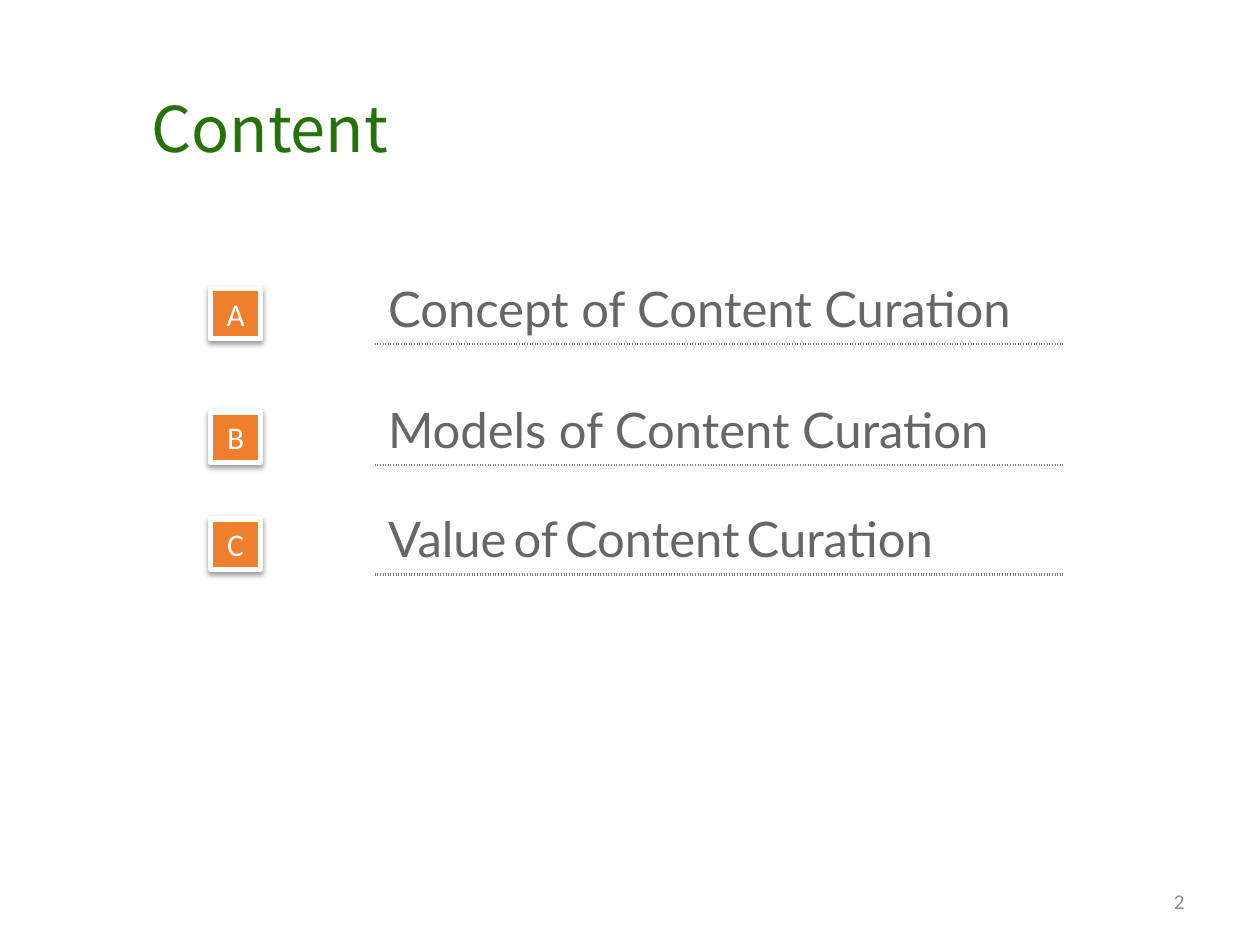
from dataclasses import dataclass
from itertools import accumulate

from lxml.etree import SubElement
from pptx import Presentation
from pptx.dml.color import RGBColor
from pptx.enum.shapes import MSO_SHAPE as Shape
from pptx.enum.text import MSO_ANCHOR as Anchor, MSO_AUTO_SIZE as AutoSize, PP_ALIGN as Align
from pptx.oxml.ns import qn
from pptx.util import Inches, Pt

GREEN = RGBColor(0x26, 0x72, 0x09)
ORANGE = RGBColor(0xEF, 0x7F, 0x2C)
TOPIC_GRAY = RGBColor(0x66, 0x66, 0x66)
RULE_GRAY = RGBColor(0x80, 0x80, 0x80)
NUMBER_GRAY = RGBColor(0x8C, 0x8C, 0x8C)
WHITE = RGBColor(0xFF, 0xFF, 0xFF)
BLACK = RGBColor(0, 0, 0)

LEFT, TOP = 1.67, 1.79
COLUMNS = (0.91, 0.4, 5.45)
ROWS = (0.94, 0.96, 0.87, 0.41)
ROW_ENDS = [TOP + end for end in accumulate(ROWS)]
BADGE = 0.4
TOPIC_COLUMN = len(COLUMNS) - 1


@dataclass(frozen=True)
class Style:
    font: str
    size: float
    color: RGBColor


@dataclass(frozen=True)
class Topic:
    letter: str
    words: tuple[str, ...]
    badge_lift: float = 0.44


TITLE = Style("Noto Sans CJK JP", 36, GREEN)
TOPIC = Style("Lato", 28, TOPIC_GRAY)
GAP = Style("Noto Sans CJK JP", 18, BLACK)
LETTER = Style("Calibri", 18, WHITE)
NUMBER = Style("Calibri", 12, NUMBER_GRAY)

TOPICS = (
    Topic("A", ("Concept of Content Curation",)),
    Topic("B", ("Models of Content Curation",), 0.42),
    Topic("C", ("Value", "of", "Content", "Curation")),
)


def add_run(paragraph, text: str, style: Style) -> None:
    run = paragraph.add_run()
    run.text = text
    run.font.name = style.font
    run.font.size = Pt(style.size)
    run.font.color.rgb = style.color
    if style.font == TITLE.font:
        SubElement(run.font._element, qn("a:ea"), typeface=style.font)


def add_rule(cell, side: str) -> None:
    line = SubElement(cell._tc.get_or_add_tcPr(), qn(f"a:{side}"), w=str(Pt(1.5)))
    fill = SubElement(line, qn("a:solidFill"))
    SubElement(fill, qn("a:srgbClr"), val=str(RULE_GRAY))
    SubElement(line, qn("a:prstDash"), val="sysDot")


def add_soft_shadow(shape) -> None:
    shape.shadow.inherit = False
    effects = shape._element.spPr.find(qn("a:effectLst"))
    shadow = SubElement(effects, qn("a:outerShdw"), blurRad=str(Pt(3.1)),
                        dist=str(Pt(1.6)), dir="5400000", rotWithShape="0")
    color = SubElement(shadow, qn("a:srgbClr"), val=str(BLACK))
    SubElement(color, qn("a:alpha"), val="38000")


def add_title(slide) -> None:
    title = slide.shapes.title
    title.left, title.top, title.width, title.height = map(Inches, (1.1, 0.66, 2.39, 0.71))
    frame = title.text_frame
    frame.word_wrap = False
    frame.auto_size = AutoSize.SHAPE_TO_FIT_TEXT
    frame.vertical_anchor = Anchor.TOP
    frame.paragraphs[0].alignment = Align.LEFT
    add_run(frame.paragraphs[0], "Content", TITLE)


def add_topic_table(slide) -> None:
    table = slide.shapes.add_table(
        len(ROWS), len(COLUMNS), Inches(LEFT), Inches(TOP),
        Inches(sum(COLUMNS)), Inches(sum(ROWS))).table
    table.first_row = table.horz_banding = False
    for column, width in zip(table.columns, COLUMNS):
        column.width = Inches(width)
    for row, height in zip(table.rows, ROWS):
        row.height = Inches(height)
    for index in range(len(ROWS)):
        cell = table.cell(index, TOPIC_COLUMN)
        if index > 0:
            add_rule(cell, "lnT")
        if index < len(TOPICS):
            add_rule(cell, "lnB")
            cell.vertical_anchor = Anchor.BOTTOM
            paragraph = cell.text_frame.paragraphs[0]
            paragraph.alignment = Align.JUSTIFY
            for position, word in enumerate(TOPICS[index].words):
                if position:
                    add_run(paragraph, " ", GAP)
                add_run(paragraph, word, TOPIC)
    for cell in table.iter_cells():
        cell.fill.background()


def add_badge(slide, topic: Topic, row_end: float) -> None:
    badge = slide.shapes.add_shape(
        Shape.RECTANGLE, Inches(LEFT), Inches(row_end - topic.badge_lift),
        Inches(BADGE), Inches(BADGE))
    badge.fill.solid()
    badge.fill.fore_color.rgb = ORANGE
    badge.line.color.rgb = WHITE
    badge.line.width = Pt(3)
    add_soft_shadow(badge)
    frame = badge.text_frame
    frame.vertical_anchor = Anchor.TOP
    frame.auto_size = AutoSize.SHAPE_TO_FIT_TEXT
    frame.paragraphs[0].alignment = Align.CENTER
    add_run(frame.paragraphs[0], topic.letter, LETTER)


def add_page_number(slide) -> None:
    frame = slide.shapes.add_textbox(*map(Inches, (7.17, 6.95, 2.33, 0.4))).text_frame
    frame.word_wrap = True
    frame.vertical_anchor = Anchor.MIDDLE
    frame.paragraphs[0].alignment = Align.RIGHT
    add_run(frame.paragraphs[0], "2", NUMBER)


def main() -> None:
    deck = Presentation()
    deck.slide_width, deck.slide_height = Inches(10), Inches(7.5)
    slide = deck.slides.add_slide(deck.slide_layouts.get_by_name("Title Only"))
    add_topic_table(slide)
    for topic, row_end in zip(TOPICS, ROW_ENDS):
        add_badge(slide, topic, row_end)
    add_title(slide)
    add_page_number(slide)
    deck.save("out.pptx")


if __name__ == "__main__":
    main()
